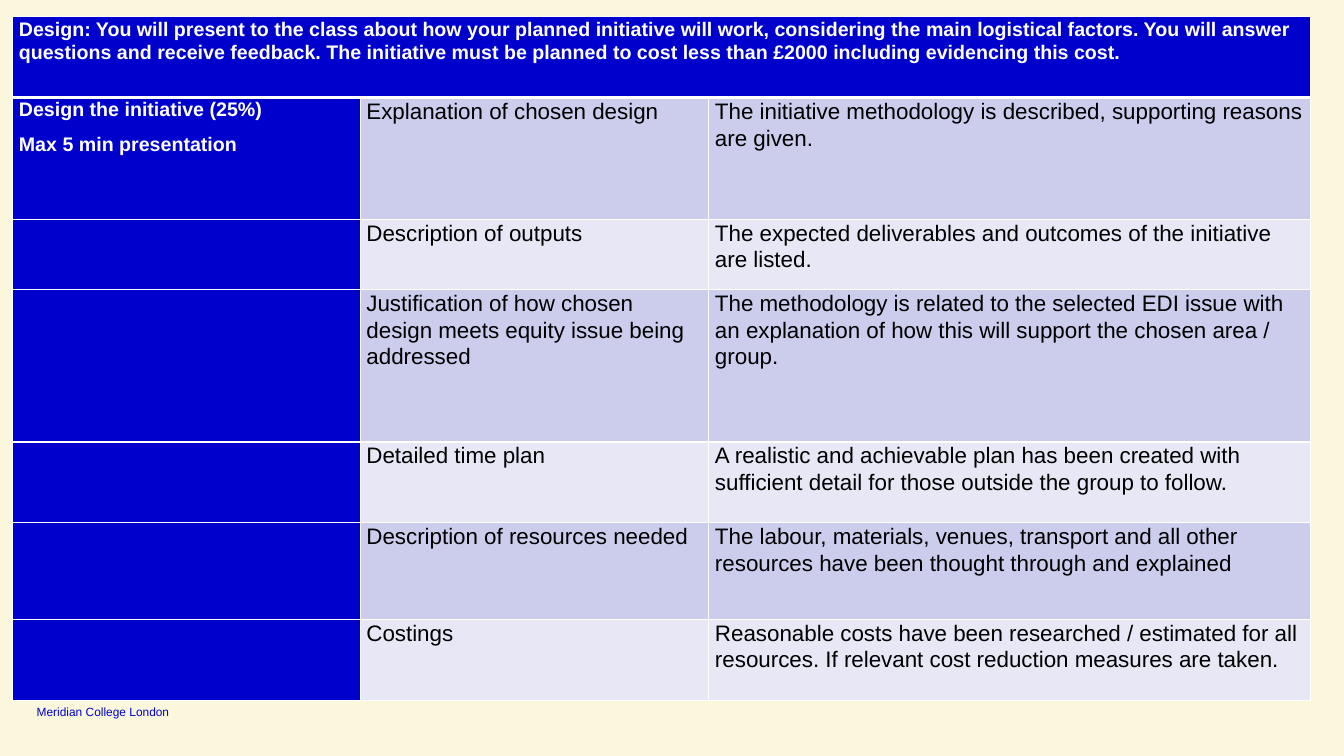
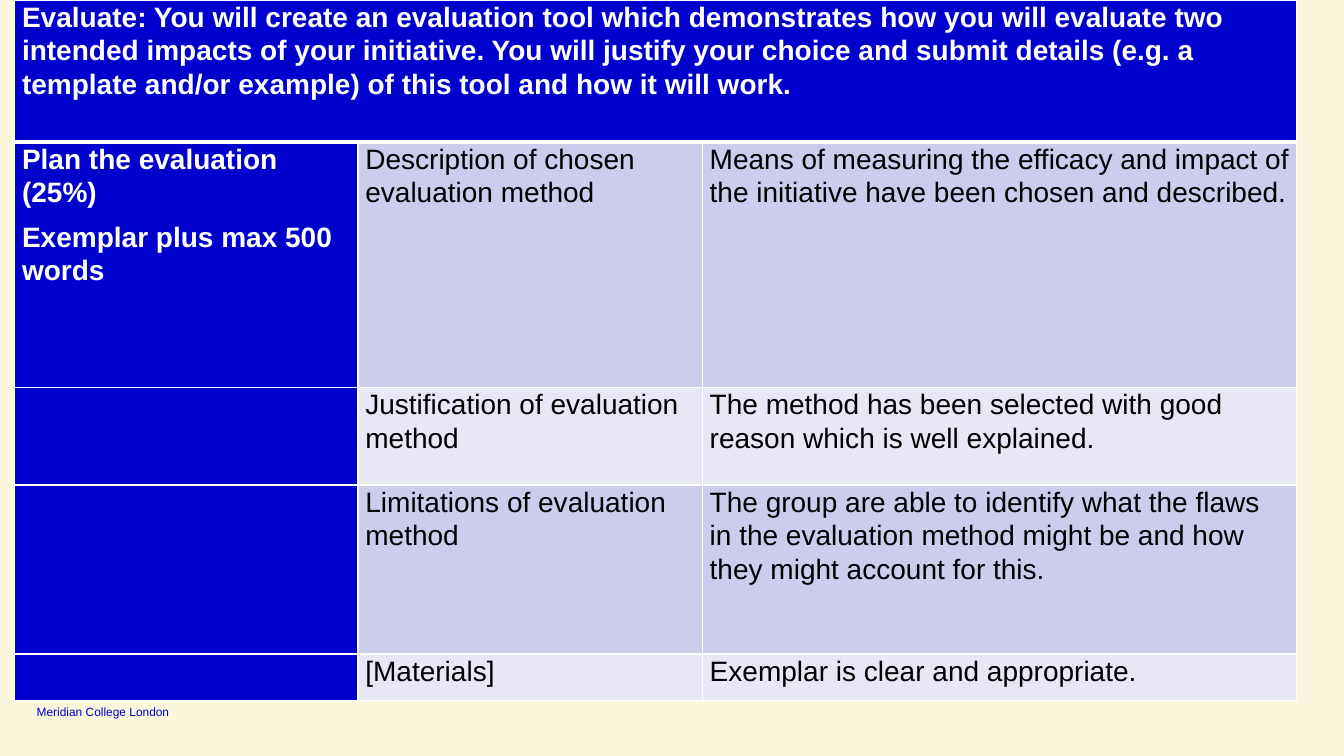
from dataclasses import dataclass

from lxml.etree import SubElement
from pptx import Presentation
from pptx.dml.color import RGBColor as RGB
from pptx.enum.text import MSO_ANCHOR as Anchor
from pptx.oxml.ns import qn
from pptx.util import Emu, Pt

PX = 9525
WIDTH, HEIGHT = 1280, 720


@dataclass(frozen=True)
class Theme:
    font: str = "Arial"
    page: str = "FBF7DC"
    heading: str = "0000CD"
    bands: tuple = ("CCCCED", "E7E7F6")
    on_heading: str = "FFFFFF"
    body: str = "000000"
    rule: str = "FFFFFF"
    rule_size: int = 1
    heading_rule_size: int = 3
    footer_size: float = 8.5
    line_spacing: float = 1.07
    space_after: int = 8


THEME = Theme()
FOOTER = "Meridian College London"
FOOTER_BOX = (35, 671, 149, 14)


@dataclass(frozen=True)
class Rubric:
    """One assessed stage: its brief, what is handed in, and (criterion, standard) pairs."""
    brief: str
    stage: str
    criteria: tuple
    corner: tuple
    columns: tuple
    rows: tuple
    inset: int
    heading_size: int
    body_size: int


DESIGN = Rubric(
    brief="Design: You will present to the class about how your planned initiative will work, "
          "considering the main logistical factors. You will answer questions and receive feedback. "
          "The initiative must be planned to cost less than £2000 including evidencing this cost.",
    stage="Design the initiative (25%)\nMax 5 min presentation",
    criteria=(
        ("Explanation of chosen design",
         "The initiative methodology is described, supporting reasons are given."),
        ("Description of outputs",
         "The expected deliverables and outcomes of the initiative are listed."),
        ("Justification of how chosen design meets equity issue being addressed",
         "The methodology is related to the selected EDI issue with an explanation of how this "
         "will support the chosen area / group."),
        ("Detailed time plan",
         "A realistic and achievable plan has been created with sufficient detail for those "
         "outside the group to follow."),
        ("Description of resources needed",
         "The labour, materials, venues, transport and all other resources have been thought "
         "through and explained"),
        ("Costings",
         "Reasonable costs have been researched / estimated for all resources. If relevant cost "
         "reduction measures are taken."),
    ),
    corner=(12, 16),
    columns=(331, 332, 573),
    rows=(77, 116, 67, 145, 77, 92, 77),
    inset=6,
    heading_size=14,
    body_size=16,
)

EVALUATION = Rubric(
    brief="Evaluate: You will create an evaluation tool which demonstrates how you will evaluate "
          "two intended impacts of your initiative. You will justify your choice and submit details "
          "(e.g. a template and/or example) of this tool and how it will work.",
    stage="Plan the evaluation (25%)\nExemplar plus max 500 words",
    criteria=(
        ("Description of chosen evaluation method",
         "Means of measuring the efficacy and impact of the initiative have been chosen and "
         "described."),
        ("Justification of evaluation method",
         "The method has been selected with good reason which is well explained."),
        ("Limitations of evaluation method",
         "The group are able to identify what the flaws in the evaluation method might be and "
         "how they might account for this."),
        ("[Materials]", "Exemplar is clear and appropriate."),
    ),
    corner=(14, 0),
    columns=(327, 328, 566),
    rows=(135, 234, 93, 161, 44),
    inset=7,
    heading_size=20,
    body_size=20,
)


def px(*lengths):
    return [Emu(length * PX) for length in lengths]


def set_font(paragraph, size, color, bold=False):
    font = paragraph.font
    font.name, font.size, font.bold = THEME.font, Pt(size), bold
    font.color.rgb = RGB.from_string(color)


def rule_cell(cell, row):
    """Draw the cell's four rules, the heavy one lying between rows 0 and 1."""
    heavy_side = {0: "B", 1: "T"}.get(row)
    properties = cell._tc.get_or_add_tcPr()
    for side in "LRTB":
        size = THEME.heading_rule_size if side == heavy_side else THEME.rule_size
        line = SubElement(properties, qn(f"a:ln{side}"), w=str(Pt(size)))
        fill = SubElement(line, qn("a:solidFill"))
        SubElement(fill, qn("a:srgbClr"), val=THEME.rule)


def fill_cell(cell, text, inset, size, ink, paper, bold):
    cell.fill.solid()
    cell.fill.fore_color.rgb = RGB.from_string(paper)
    cell.margin_left, cell.margin_right = px(inset, inset)
    cell.margin_top = cell.margin_bottom = 0
    cell.text = text
    for paragraph in cell.text_frame.paragraphs:
        paragraph.line_spacing = THEME.line_spacing
        paragraph.space_after = Pt(THEME.space_after)
        set_font(paragraph, size, ink, bold)


def add_rubric(slide, rubric):
    contents = [(rubric.brief, "", "")]
    for number, criterion in enumerate(rubric.criteria):
        contents.append(("" if number else rubric.stage, *criterion))

    box = px(*rubric.corner, sum(rubric.columns), sum(rubric.rows))
    grid = slide.shapes.add_table(len(contents), len(rubric.columns), *box).table
    grid.horz_banding = False
    for column, width in zip(grid.columns, px(*rubric.columns)):
        column.width = width
    for row, height in zip(grid.rows, px(*rubric.rows)):
        row.height = height

    for r, texts in enumerate(contents):
        for c, text in enumerate(texts):
            cell = grid.cell(r, c)
            rule_cell(cell, r)
            if r == 0 or c == 0:
                style = (rubric.heading_size, THEME.on_heading, THEME.heading, True)
            else:
                style = (rubric.body_size, THEME.body, THEME.bands[(r - 1) % 2], False)
            fill_cell(cell, text, rubric.inset, *style)
    grid.cell(0, 0).merge(grid.cell(0, len(rubric.columns) - 1))


def add_footer(slide, box):
    frame = slide.shapes.add_textbox(*px(*box)).text_frame
    frame.margin_left = frame.margin_right = frame.margin_top = frame.margin_bottom = 0
    frame.vertical_anchor = Anchor.BOTTOM
    frame.word_wrap = True
    frame.text = FOOTER
    set_font(frame.paragraphs[0], THEME.footer_size, THEME.heading)


def add_rubric_slide(deck, rubric):
    slide = deck.slides.add_slide(deck.slide_layouts[6])
    add_footer(slide, FOOTER_BOX)
    add_rubric(slide, rubric)


def main():
    deck = Presentation()
    deck.slide_width, deck.slide_height = px(WIDTH, HEIGHT)
    page = deck.slide_master.background.fill
    page.solid()
    page.fore_color.rgb = RGB.from_string(THEME.page)
    for rubric in (DESIGN, EVALUATION):
        add_rubric_slide(deck, rubric)
    deck.save("out.pptx")


if __name__ == "__main__":
    main()
